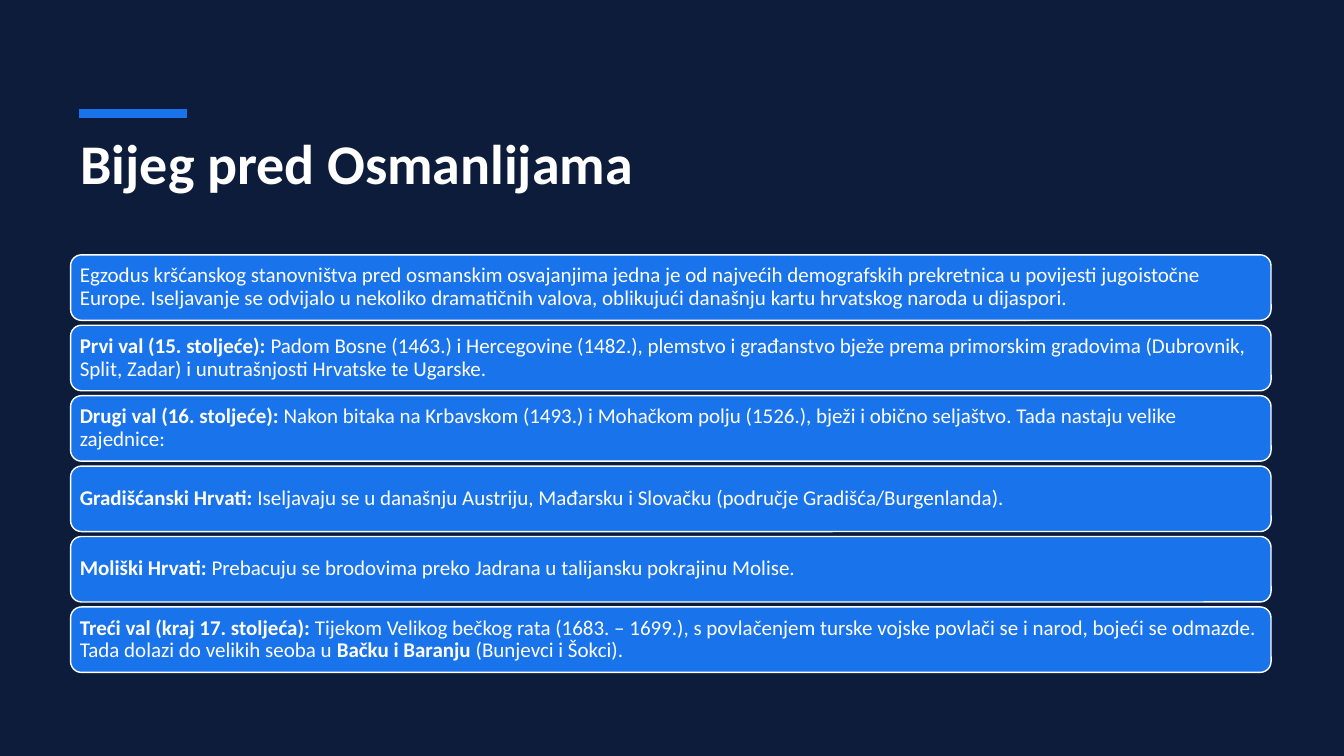
from pptx import Presentation
from pptx.dml.color import RGBColor
from pptx.enum.shapes import MSO_CONNECTOR, MSO_SHAPE
from pptx.enum.text import MSO_ANCHOR, PP_ALIGN
from pptx.oxml.ns import qn
from pptx.util import Pt
from lxml import etree

STRAIGHT = MSO_CONNECTOR.STRAIGHT
ROUNDED = MSO_SHAPE.ROUNDED_RECTANGLE
TOP, MIDDLE = MSO_ANCHOR.TOP, MSO_ANCHOR.MIDDLE
LEFT = PP_ALIGN.LEFT

COLORS = {"background": "0D1C3B", "accent": "1973EB", "text": "FFFFFF"}
FONT = "Calibri"
MARGIN, CONTENT_WIDTH = 50.4, 857.5
CARDS_TOP, CARD_HEIGHT, CARD_PITCH = 182, 46.8, 50.3

CARDS = [
    [("Egzodus kršćanskog stanovništva pred osmanskim osvajanjima jedna je od najvećih "
      "demografskih prekretnica u povijesti jugoistočne Europe. Iseljavanje se odvijalo u "
      "nekoliko dramatičnih valova, oblikujući današnju kartu hrvatskog naroda u dijaspori.", False)],
    [("Prvi val (15. stoljeće): ", True),
     ("Padom Bosne (1463.) i Hercegovine (1482.), plemstvo i građanstvo bježe prema primorskim "
      "gradovima (Dubrovnik, Split, Zadar) i unutrašnjosti Hrvatske te Ugarske.", False)],
    [("Drugi val (16. stoljeće):", True),
     (" Nakon bitaka na Krbavskom (1493.) i Mohačkom polju (1526.), bježi i obično seljaštvo. "
      "Tada nastaju velike zajednice:", False)],
    [("Gradišćanski Hrvati:", True),
     (" Iseljavaju se u današnju Austriju, Mađarsku i Slovačku "
      "(područje Gradišća/Burgenlanda).", False)],
    [("Moliški Hrvati:", True),
     (" Prebacuju se brodovima preko Jadrana u talijansku pokrajinu Molise.", False)],
    [("Treći val (kraj 17. stoljeća):", True),
     (" Tijekom Velikog bečkog rata (1683. – 1699.), s povlačenjem turske vojske povlači se i "
      "narod, bojeći se odmazde. Tada dolazi do velikih seoba u ", False),
     ("Bačku i Baranju", True),
     (" (Bunjevci i Šokci).", False)],
]


class SlideBuilder:
    """Draws styled elements on one slide, with lengths in points."""

    def __init__(self, slide):
        self.slide = slide
        fill = slide.background.fill
        fill.solid()
        fill.fore_color.rgb = self.color("background")

    def color(self, name):
        return RGBColor.from_string(COLORS[name])

    def add_runs(self, paragraph, runs, size):
        for text, bold in runs:
            run = paragraph.add_run()
            run.text = text
            run.font.bold = bold
        paragraph.alignment = LEFT
        paragraph.font.name = FONT
        paragraph.font.size = Pt(size)
        paragraph.font.color.rgb = self.color("text")

    def accent_line(self, left, right, y, width):
        line = self.slide.shapes.add_connector(STRAIGHT, Pt(left), Pt(y), Pt(right), Pt(y))
        line.line.color.rgb = self.color("accent")
        line.line.width = Pt(width)
        etree.SubElement(line._element.spPr, qn("a:effectLst"))

    def title(self, text, left, top, width, height):
        box = self.slide.shapes.add_textbox(Pt(left), Pt(top), Pt(width), Pt(height))
        frame = box.text_frame
        frame.word_wrap = True
        frame.vertical_anchor = TOP
        self.add_runs(frame.paragraphs[0], [(text, True)], 40)

    def card(self, runs, left, top, width, height):
        shape = self.slide.shapes.add_shape(ROUNDED, Pt(left), Pt(top), Pt(width), Pt(height))
        shape.shadow.inherit = False
        shape.fill.solid()
        shape.fill.fore_color.rgb = self.color("accent")
        shape.line.color.rgb = self.color("text")
        shape.line.width = Pt(1)
        frame = shape.text_frame
        frame.word_wrap = True
        frame.vertical_anchor = MIDDLE
        frame.margin_left = frame.margin_right = Pt(4.3)
        frame.margin_top = frame.margin_bottom = Pt(4)
        paragraph = frame.paragraphs[0]
        paragraph.line_spacing = 0.9
        self.add_runs(paragraph, runs, 15)


def main():
    presentation = Presentation()
    presentation.slide_width, presentation.slide_height = Pt(960), Pt(540)
    builder = SlideBuilder(presentation.slides.add_slide(presentation.slide_layouts[6]))
    builder.accent_line(56.3, 133.3, 81.2, 6)
    builder.title("Bijeg pred Osmanlijama", MARGIN, 88, CONTENT_WIDTH, 86.4)
    for index, runs in enumerate(CARDS):
        builder.card(runs, MARGIN, CARDS_TOP + index * CARD_PITCH, CONTENT_WIDTH, CARD_HEIGHT)
    presentation.save("out.pptx")


if __name__ == "__main__":
    main()
